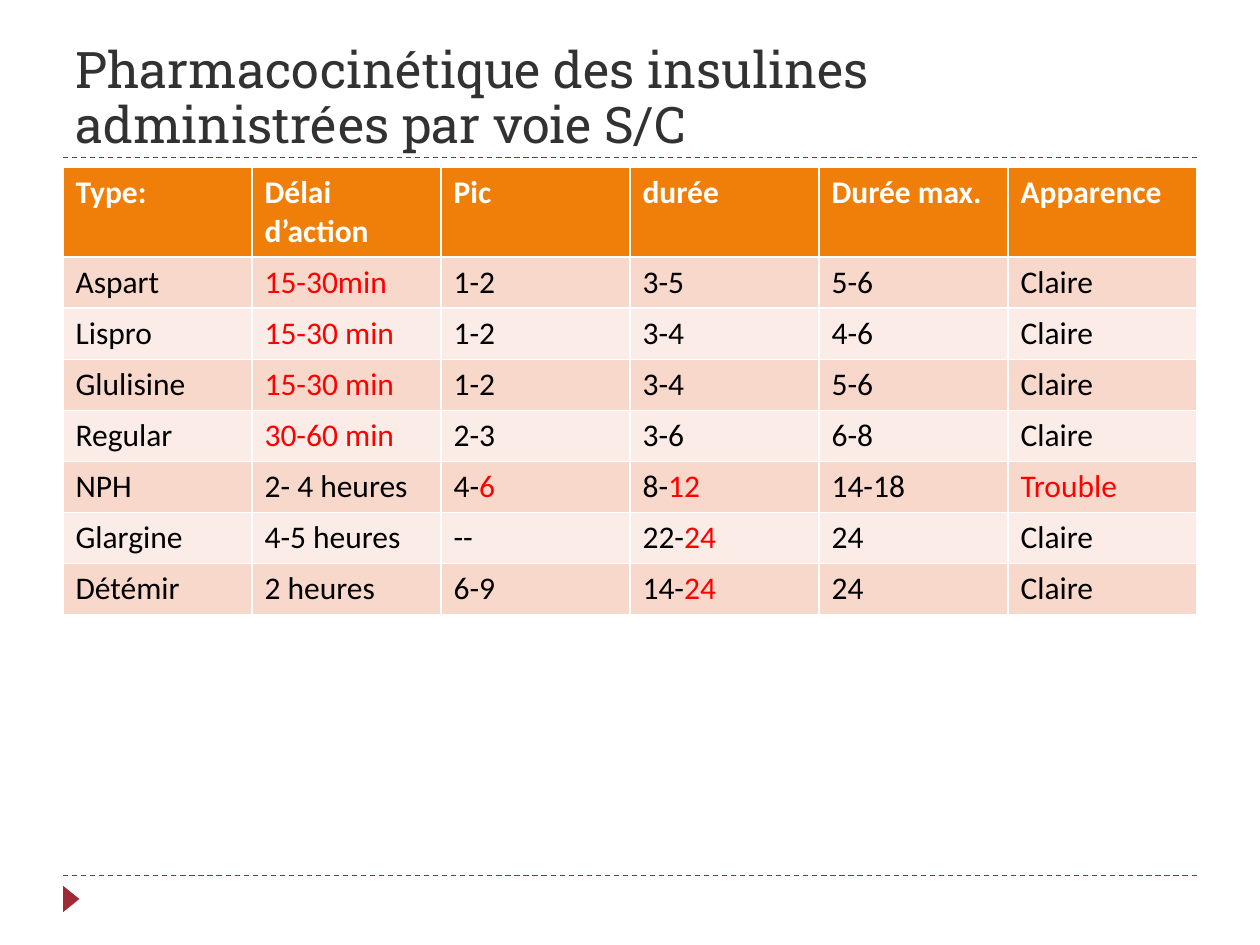
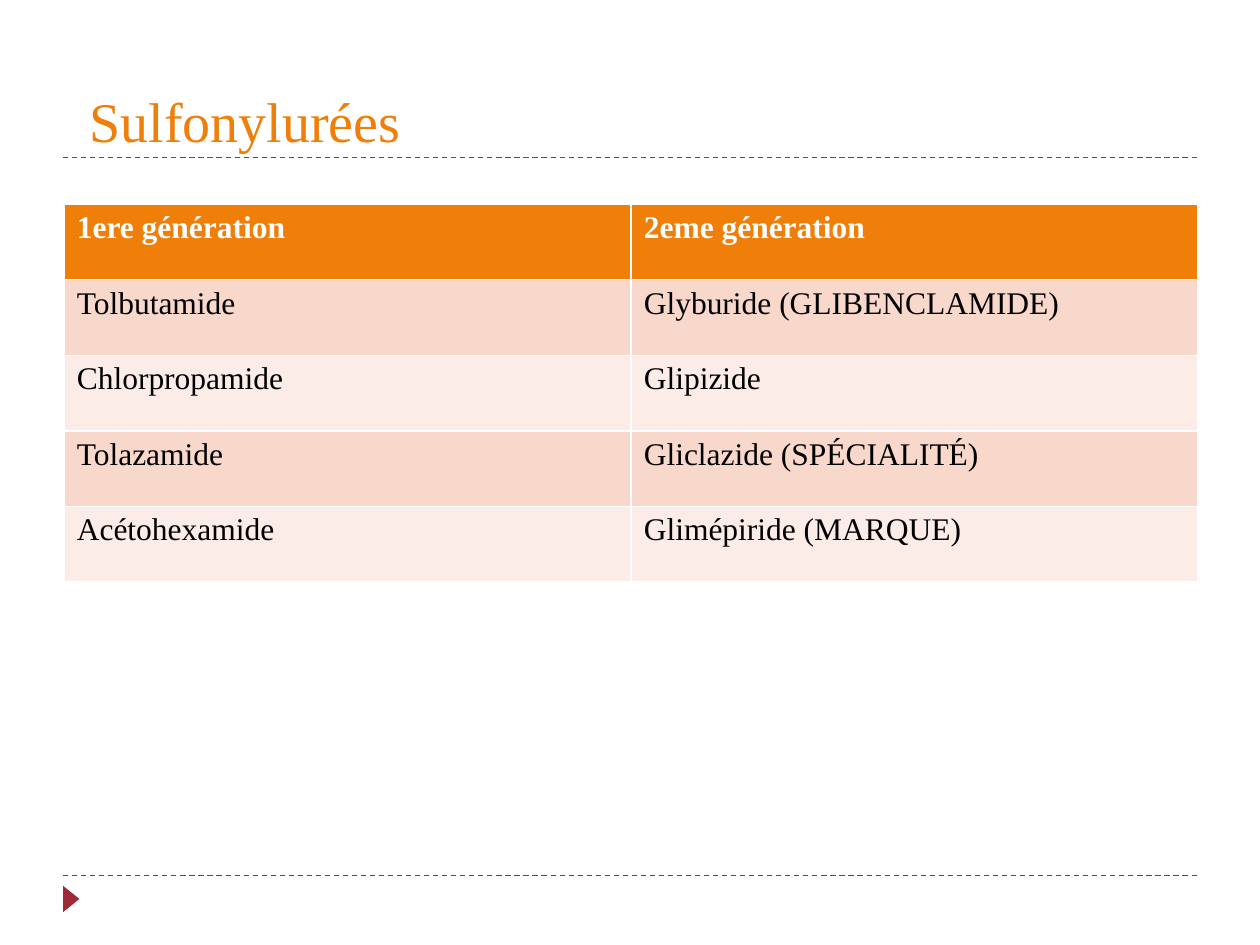
import dataclasses

import lxml.etree
import pptx
import pptx.dml.color
import pptx.enum.dml
import pptx.enum.shapes
import pptx.enum.text
import pptx.oxml.ns
import pptx.util


@dataclasses.dataclass(frozen=True)
class Theme:
    ink: str = "323232"
    orange: str = "F07F09"
    wine: str = "9F2936"
    red: str = "FF0000"
    black: str = "000000"
    white: str = "FFFFFF"
    bands: tuple = ("F9D8CC", "FCECE7")
    sans: str = "Calibri"
    slab: str = "Roboto Slab"
    serif: str = "Times New Roman"
    body: float = 18
    rule: float = 0.75


THEME = Theme()
COLS, ROWS = 20, 15
LEFT, WIDE = 1, 18
TOP_RULE, LOW_RULE = 2.5, 13.9

# A star starts the part of a cell that is set in red.
INSULINS = [
    ["Type:", "Délai d’action", "Pic", "durée", "Durée max.", "Apparence"],
    ["Aspart", "*15-30min", "1-2", "3-5", "5-6", "Claire"],
    ["Lispro", "*15-30 min", "1-2", "3-4", "4-6", "Claire"],
    ["Glulisine", "*15-30 min", "1-2", "3-4", "5-6", "Claire"],
    ["Regular", "*30-60 min", "2-3", "3-6", "6-8", "Claire"],
    ["NPH", "2- 4 heures", "4-*6", "8-*12", "14-18", "*Trouble"],
    ["Glargine", "4-5 heures", "--", "22-*24", "24", "Claire"],
    ["Détémir", "2 heures", "6-9", "14-*24", "24", "Claire"],
]
SULFAS = [
    ["1ere génération", "2eme génération"],
    ["Tolbutamide", "Glyburide (GLIBENCLAMIDE)"],
    ["Chlorpropamide", "Glipizide"],
    ["Tolazamide", "Gliclazide (SPÉCIALITÉ)"],
    ["Acétohexamide", "Glimépiride (MARQUE)"],
]


def grid(count):
    """Length of a number of grid steps, each half an inch."""
    return pptx.util.Inches(count / 2)


def tint(code):
    return pptx.dml.color.RGBColor.from_string(code)


def add_run(para, text, face, size, color, bold=False):
    run = para.add_run()
    run.text = text
    run.font.name = face
    run.font.size = pptx.util.Pt(size)
    run.font.bold = bold
    run.font.color.rgb = tint(color)


def add_rule(slide, row):
    line = slide.shapes.add_connector(
        pptx.enum.shapes.MSO_CONNECTOR.STRAIGHT,
        grid(LEFT), grid(row), grid(LEFT + WIDE), grid(row))
    line.line.color.rgb = tint(THEME.wine)
    line.line.width = pptx.util.Pt(THEME.rule)
    line.line.dash_style = pptx.enum.dml.MSO_LINE.DASH
    lxml.etree.SubElement(line._element.spPr, pptx.oxml.ns.qn("a:effectLst"))


def add_mark(slide):
    """Small triangle under the lower rule, pointing right."""
    mark = slide.shapes.add_shape(
        pptx.enum.shapes.MSO_SHAPE.ISOSCELES_TRIANGLE,
        grid(0.92), grid(14.14), grid(0.42), grid(0.26))
    mark.rotation = 90
    mark.shadow.inherit = False
    mark.fill.solid()
    mark.fill.fore_color.rgb = tint(THEME.wine)
    mark.line.fill.background()


def add_slide(deck, title, face, size, color, inset=0.2):
    """Slide with the shared rules, mark and title style."""
    slide = deck.slides.add_slide(deck.slide_layouts[5])
    for row in (LOW_RULE, TOP_RULE):
        add_rule(slide, row)
    add_mark(slide)
    box = slide.shapes.title
    box.left, box.top = grid(LEFT), grid(0.34)
    box.width, box.height = grid(WIDE), grid(2.16)
    frame = box.text_frame
    frame.auto_size = pptx.enum.text.MSO_AUTO_SIZE.NONE
    frame.word_wrap = True
    frame.vertical_anchor = pptx.enum.text.MSO_ANCHOR.BOTTOM
    frame.margin_left = grid(inset)
    frame.margin_bottom = grid(0.04)
    para = frame.paragraphs[0]
    para.alignment = pptx.enum.text.PP_ALIGN.LEFT
    para.line_spacing = 0.92
    add_run(para, title, face, size, color)
    return slide


def fill_cell(cell, text, face, row):
    head = row == 0
    cell.fill.solid()
    cell.fill.fore_color.rgb = tint(
        THEME.orange if head else THEME.bands[(row - 1) % 2])
    plain, _, alert = text.partition("*")
    base = THEME.white if head else THEME.black
    for part, color in ((plain, base), (alert, THEME.red)):
        if part:
            add_run(cell.text_frame.paragraphs[0], part, face,
                    THEME.body, color, head)


def add_table(slide, data, face, left, top, head, step):
    """Table of equal columns; head and step are its row heights."""
    count = len(data[0])
    high = head + step * (len(data) - 1)
    table = slide.shapes.add_table(
        len(data), count, grid(left), grid(top), grid(WIDE), grid(high)).table
    for col in table.columns:
        col.width = grid(WIDE / count)
    for row, texts in enumerate(data):
        table.rows[row].height = grid(step if row else head)
        for col, text in enumerate(texts):
            fill_cell(table.cell(row, col), text, face, row)


def main():
    deck = pptx.Presentation()
    deck.slide_width, deck.slide_height = grid(COLS), grid(ROWS)

    slide = add_slide(
        deck, "Pharmacocinétique des insulines administrées par voie S/C",
        THEME.slab, 28.8, THEME.ink)
    add_table(slide, INSULINS, THEME.sans, LEFT, 2.66, 1.4, 0.81)

    slide = add_slide(
        deck, "Sulfonylurées", THEME.serif, 32, THEME.orange, inset=0.42)
    add_table(slide, SULFAS, THEME.serif, 1.02, 3.24, 1.2, 1.2)

    deck.save("out.pptx")


if __name__ == "__main__":
    main()
